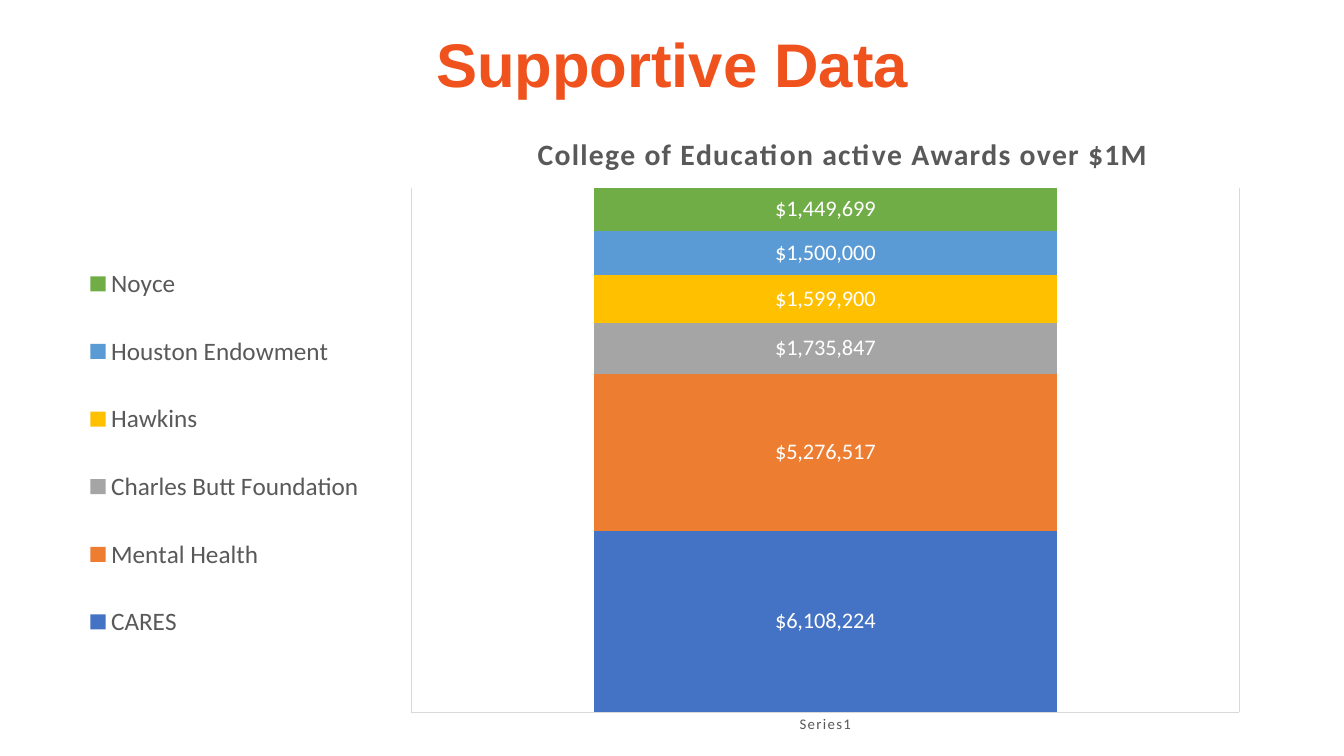
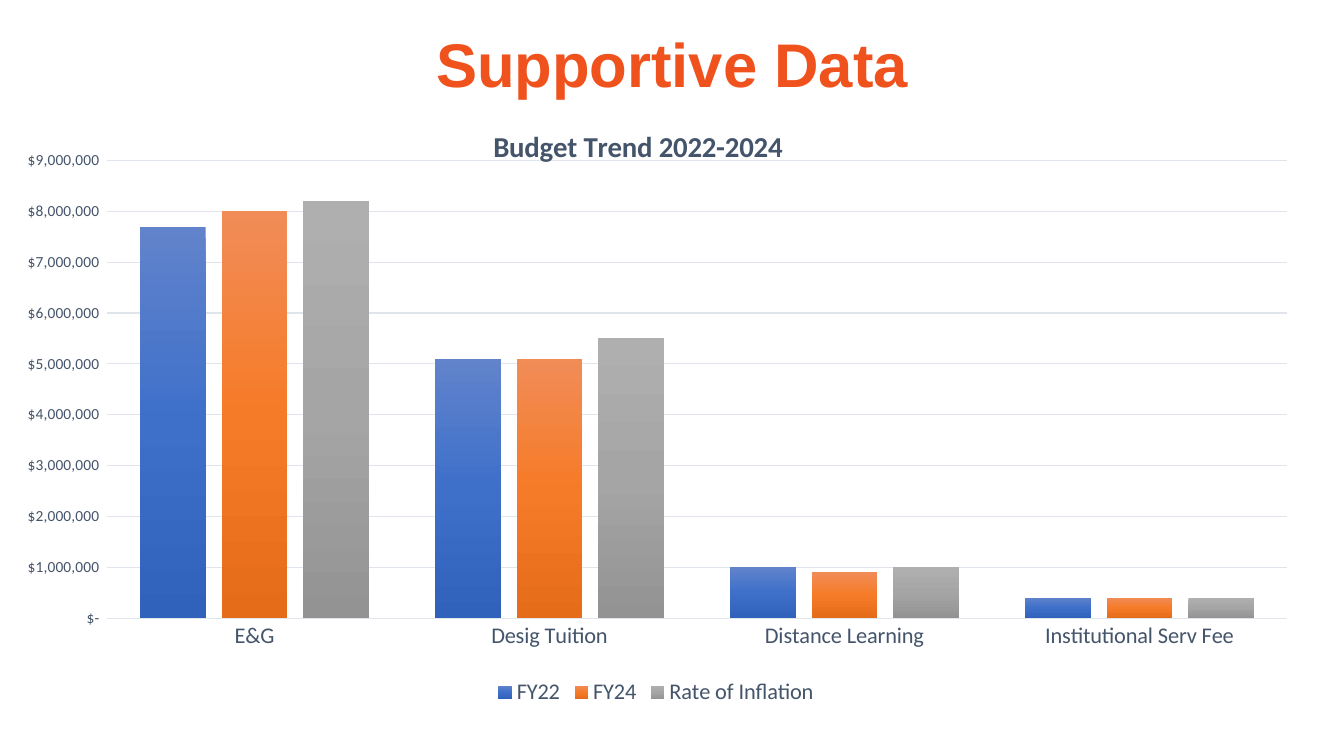
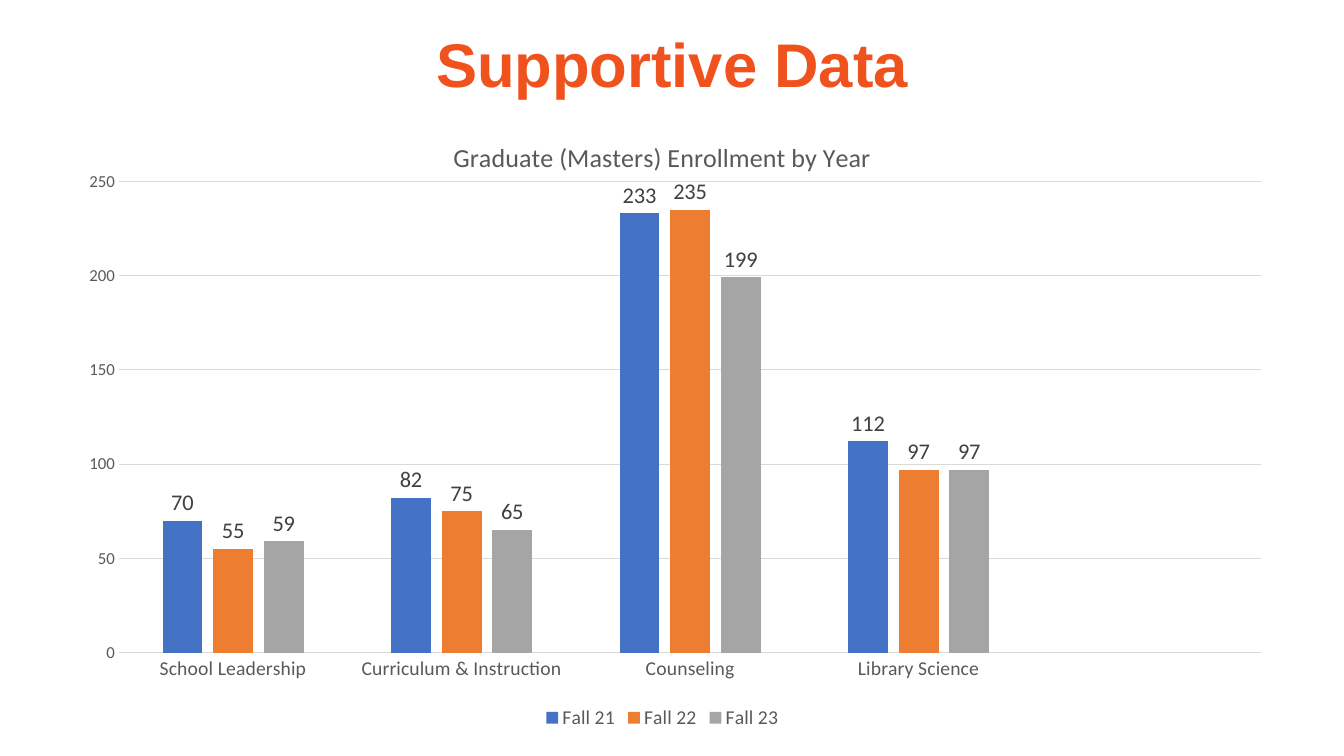
"""Build three supportive-data slides, each with a title and one column chart."""
from copy import deepcopy

from lxml import etree
from pptx import Presentation
from pptx import util as u
from pptx.chart import data
from pptx.dml import color
from pptx.enum import chart as kinds, text
from pptx.oxml import ns

COLORS = {
    "title": "F0521E", "gray": "595959", "slate": "44546A", "label": "404040",
    "white": "FFFFFF", "rule": "D9D9D9", "pale": "E0E5EB",
    "blue": "4472C4", "orange": "ED7D31", "silver": "A5A5A5",
    "gold": "FFC000", "sky": "5B9BD5", "green": "70AD47",
}
GRADIENTS = {
    "blue fade": ("6183CB", "3E70CA", "3062BB"),
    "orange fade": ("F18C57", "F67B28", "E56C19"),
    "silver fade": ("AFAFAF", "A5A5A5", "939393"),
}
TITLE_BOX = (6.9, 2.8, 86.27, 19.33)
CHARTS = [
    {
        "title": "College of Education active Awards over $1M", "title_size": 21.2,
        "bold": True, "spacing": 100, "title_at": (38.7, 0.8),
        "kind": kinds.XL_CHART_TYPE.COLUMN_STACKED_100,
        "box": (5.78, 16.4, 87.4, 80.67), "plot": (28.4, 10.5, 70.5, 86.4),
        "ink": "gray", "rule": "rule", "gap": 79, "overlap": 100,
        "category_size": 10.6, "value_size": None, "value_format": None,
        "legend": kinds.XL_LEGEND_POSITION.LEFT, "legend_size": 18,
        "legend_at": (0, 17.7, 25, 73),
        "labels": ("white", '"$"#,##0', kinds.XL_LABEL_POSITION.CENTER),
        "categories": ["Series1"],
        "series": [
            ("CARES", [6108224], "blue"),
            ("Mental Health", [5276517], "orange"),
            ("Charles Butt Foundation", [1735847], "silver"),
            ("Hawkins", [1599900], "gold"),
            ("Houston Endowment", [1500000], "sky"),
            ("Noyce", [1449699], "green"),
        ],
    },
    {
        "title": "Budget Trend 2022-2024", "title_size": 20.6,
        "bold": True, "spacing": 0, "title_at": (36.7, 1.2),
        "kind": kinds.XL_CHART_TYPE.COLUMN_CLUSTERED,
        "box": (1.8, 15.07, 94, 78.93), "plot": (6.5, 7.8, 93.5, 76.7),
        "ink": "slate", "rule": "pale", "gap": 100, "overlap": -24,
        "category_size": 16, "value_size": 11,
        "value_format": '_("$"* #,##0_);_("$"* \\(#,##0\\);_("$"* "-"_);_(@_)',
        "legend": kinds.XL_LEGEND_POSITION.BOTTOM, "legend_size": 16,
        "legend_at": None, "labels": None,
        "categories": ["E&G", "Desig Tuition", "Distance Learning", "Institutional Serv Fee"],
        "series": [
            ("FY22", [7700000, 5100000, 1000000, 400000], "blue fade"),
            ("FY24", [8000000, 5100000, 900000, 400000], "orange fade"),
            ("Rate of Inflation", [8200000, 5500000, 1000000, 400000], "silver fade"),
        ],
    },
    {
        "title": "Graduate (Masters) Enrollment by Year", "title_size": 18.6,
        "bold": False, "spacing": 0, "title_at": (32.3, 2.3),
        "kind": kinds.XL_CHART_TYPE.COLUMN_CLUSTERED,
        "box": (4.35, 15.87, 89.87, 81.2), "plot": (5, 10, 94.6, 76.8),
        "ink": "gray", "rule": "rule", "gap": 219, "overlap": -27,
        "category_size": 14, "value_size": 12, "value_format": "General",
        "legend": kinds.XL_LEGEND_POSITION.BOTTOM, "legend_size": 14,
        "legend_at": None,
        "labels": ("label", "General", kinds.XL_LABEL_POSITION.OUTSIDE_END),
        "categories": ["School Leadership", "Curriculum & Instruction", "Counseling",
                       "Library Science", ""],
        "series": [
            ("Fall 21", [70, 82, 233, 112, None], "blue"),
            ("Fall 22", [55, 75, 235, 97, None], "orange"),
            ("Fall 23", [59, 65, 199, 97, None], "silver"),
        ],
    },
]

presentation = Presentation()
presentation.slide_width = u.Inches(13.33)
presentation.slide_height = u.Inches(7.5)


def style(font, size, ink, bold=False, name="Calibri"):
    font.size, font.bold, font.name = u.Pt(size), bold, name
    font.color.rgb = color.RGBColor.from_string(COLORS[ink])


def place(element, index, box):
    for old in element.findall(ns.qn("c:layout")):
        element.remove(old)
    layout = etree.Element(ns.qn("c:layout"))
    manual = etree.SubElement(layout, ns.qn("c:manualLayout"))
    shares = [round(percent / 100, 4) for percent in box]
    settings = [("xMode", "edge"), ("yMode", "edge"), *zip("xywh", shares)]
    if element.tag == ns.qn("c:plotArea"):
        settings.insert(0, ("layoutTarget", "inner"))
    for name, value in settings:
        etree.SubElement(manual, ns.qn(f"c:{name}")).set("val", str(value))
    element.insert(index, layout)


page = (presentation.slide_width, presentation.slide_height) * 2
for design in CHARTS:
    slide = presentation.slides.add_slide(presentation.slide_layouts[5])
    title = slide.shapes.title
    title.left, title.top, title.width, title.height = (
        round(side * share / 100) for side, share in zip(page, TITLE_BOX))
    title.text_frame.text = "Supportive Data"
    title.text_frame.vertical_anchor = text.MSO_ANCHOR.MIDDLE
    title.text_frame.margin_bottom = u.Inches(0.58)
    paragraph = title.text_frame.paragraphs[0]
    paragraph.alignment = text.PP_ALIGN.CENTER
    paragraph.line_spacing = 0.9
    style(paragraph.runs[0].font, 44, "title", True, "Arial")

    chart_data = data.CategoryChartData()
    chart_data.categories = design["categories"]
    for name, values, _ in design["series"]:
        chart_data.add_series(name, values)
    box = [round(side * share / 100) for side, share in zip(page, design["box"])]
    chart = slide.shapes.add_chart(design["kind"], *box, chart_data).chart
    chart.font.size, chart.font.name = u.Pt(10), "Calibri"
    ink = design["ink"]
    rule = color.RGBColor.from_string(COLORS[design["rule"]])

    heading = chart.chart_title.text_frame
    heading.text = design["title"]
    run = heading.paragraphs[0].runs[0]
    style(run.font, design["title_size"], ink, design["bold"])
    chart.chart_title.include_in_layout = False

    category_axis, value_axis = chart.category_axis, chart.value_axis
    style(category_axis.tick_labels.font, design["category_size"], ink)
    if design["spacing"]:
        fonts = [run.font._element, *category_axis._element.iter(ns.qn("a:defRPr"))]
        for properties in fonts:
            properties.set("spc", str(design["spacing"]))
    lines = [category_axis.format.line]
    value_axis.has_major_gridlines = False
    if design["value_size"]:
        style(value_axis.tick_labels.font, design["value_size"], ink)
        value_axis.tick_labels.number_format = design["value_format"]
        value_axis.tick_labels.number_format_is_linked = False
        value_axis.format.line.fill.background()
        lines.append(value_axis.major_gridlines.format.line)
    else:
        value_axis.visible = False
        lines.append(category_axis.major_gridlines.format.line)
    for axis in (category_axis, value_axis):
        axis.major_tick_mark = kinds.XL_TICK_MARK.NONE
    for line in lines:
        line.color.rgb, line.width = rule, u.Pt(0.75)

    chart.has_legend = True
    chart.legend.position = design["legend"]
    chart.legend.include_in_layout = False
    style(chart.legend.font, design["legend_size"], ink)

    plot = chart.plots[0]
    plot.vary_by_categories = False
    plot.gap_width, plot.overlap = design["gap"], design["overlap"]
    for series, (_, _, paint) in zip(plot.series, design["series"]):
        fill = series.format.fill
        if paint in GRADIENTS:
            fill.gradient()
            fill.gradient_angle = 270
            stop_list = next(series._element.iter(ns.qn("a:gsLst")))
            stop_list.append(deepcopy(stop_list[0]))
            for index, (stop, shade) in enumerate(zip(fill.gradient_stops, GRADIENTS[paint])):
                stop.position = index / 2
                stop.color.rgb = color.RGBColor.from_string(shade)
        else:
            fill.solid()
            fill.fore_color.rgb = color.RGBColor.from_string(COLORS[paint])
        if design["labels"]:
            label_ink, number_format, position = design["labels"]
            labels = series.data_labels
            labels.show_value = True
            labels.number_format = number_format
            labels.number_format_is_linked = False
            labels.position = position
            style(labels.font, 16, label_ink)

    place(chart._chartSpace.chart.plotArea, 0, design["plot"])
    place(chart.chart_title._element, 1, design["title_at"])
    if design["legend_at"]:
        place(chart.legend._element, 1, design["legend_at"])

presentation.save("out.pptx")
